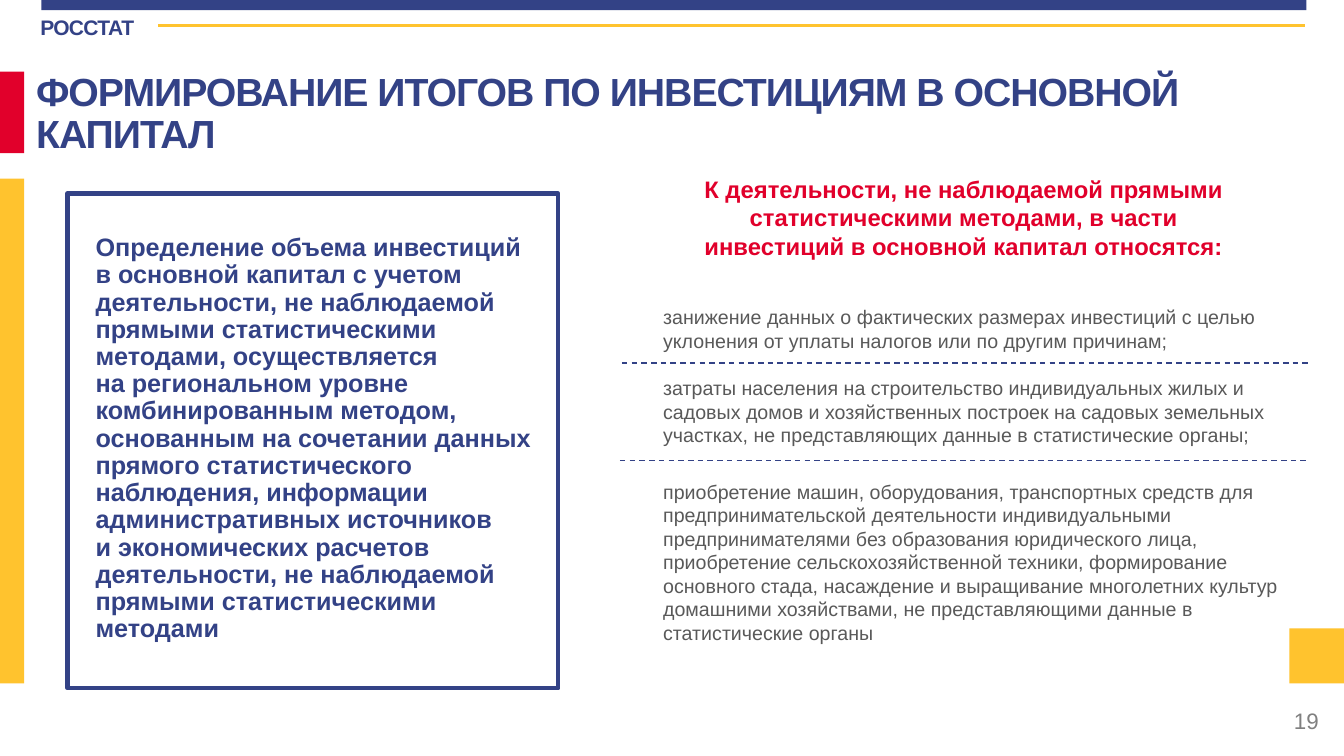
from dataclasses import dataclass

from lxml import etree
from pptx import Presentation
from pptx.dml.color import RGBColor
from pptx.enum.dml import MSO_LINE
from pptx.enum.shapes import MSO_CONNECTOR, MSO_SHAPE
from pptx.enum.text import MSO_ANCHOR, PP_ALIGN
from pptx.oxml.ns import qn
from pptx.util import Pt

RECTANGLE = MSO_SHAPE.RECTANGLE
STRAIGHT = MSO_CONNECTOR.STRAIGHT
DASH = MSO_LINE.DASH
LEFT, CENTER, RIGHT = PP_ALIGN.LEFT, PP_ALIGN.CENTER, PP_ALIGN.RIGHT
TOP, MIDDLE = MSO_ANCHOR.TOP, MSO_ANCHOR.MIDDLE


@dataclass(frozen=True)
class Theme:
    font: str = "Arial"
    blue: str = "334286"
    red: str = "E1002B"
    yellow: str = "FFC32E"
    dark_gray: str = "595959"
    light_gray: str = "808080"
    title_size: int = 28
    summary_size: int = 18
    heading_size: int = 17
    number_size: int = 16
    agency_size: int = 15
    reason_size: int = 14


class SlideBuilder:
    def __init__(self, slide, theme):
        self.shapes = slide.shapes
        self.theme = theme

    def bar(self, left, top, width, height, color):
        bar = self.shapes.add_shape(RECTANGLE, Pt(left), Pt(top), Pt(width), Pt(height))
        bar.shadow.inherit = False
        bar.fill.solid()
        bar.fill.fore_color.rgb = RGBColor.from_string(color)
        bar.line.fill.background()

    def frame(self, left, top, width, height, color, weight):
        frame = self.shapes.add_shape(RECTANGLE, Pt(left), Pt(top), Pt(width), Pt(height))
        frame.shadow.inherit = False
        frame.fill.background()
        frame.line.color.rgb = RGBColor.from_string(color)
        frame.line.width = Pt(weight)

    def rule(self, left, right, y, color, weight, dash=None):
        rule = self.shapes.add_connector(STRAIGHT, Pt(left), Pt(y), Pt(right), Pt(y))
        rule.line.color.rgb = RGBColor.from_string(color)
        rule.line.width = Pt(weight)
        if dash is not None:
            rule.line.dash_style = dash
        etree.SubElement(rule.element.spPr, qn("a:effectLst"))

    def text(self, left, top, width, height, lines, size, color, bold=False,
             align=LEFT, anchor=TOP, spacing=1.0, tracking=0, inset=(7.2, 3.6)):
        box = self.shapes.add_textbox(Pt(left), Pt(top), Pt(width), Pt(height))
        frame = box.text_frame
        frame.word_wrap = True
        frame.vertical_anchor = anchor
        frame.margin_left = frame.margin_right = Pt(inset[0])
        frame.margin_top = frame.margin_bottom = Pt(inset[1])
        para = frame.paragraphs[0]
        para.alignment = align
        para.line_spacing = spacing
        for index, line in enumerate(lines):
            if index:
                para.add_line_break()
            span = para.add_run()
            span.text = line
            span.font.name = self.theme.font
            span.font.size = Pt(size)
            span.font.bold = bold
            span.font.color.rgb = RGBColor.from_string(color)
            if tracking:
                span.font._element.set("spc", str(round(tracking * 100)))


SUMMARY = [
    "Определение объема инвестиций в основной капитал с учетом деятельности, "
    "не наблюдаемой прямыми статистическими методами, осуществляется",
    "на региональном уровне комбинированным методом, основанным на сочетании данных "
    "прямого статистического наблюдения, информации административных источников",
    "и экономических расчетов деятельности, не наблюдаемой прямыми "
    "статистическими методами",
]

REASONS = [
    (214.6, 41, "занижение данных о фактических размерах инвестиций с целью уклонения "
     "от уплаты налогов или по другим причинам;"),
    (265, 58.3, "затраты населения на строительство индивидуальных жилых и садовых домов "
     "и хозяйственных построек на садовых земельных участках, не представляющих данные "
     "в статистические органы;"),
    (339.1, 126, "приобретение машин, оборудования, транспортных средств для "
     "предпринимательской деятельности индивидуальными предпринимателями без образования "
     "юридического лица, приобретение сельскохозяйственной техники, формирование основного "
     "стада, насаждение и выращивание многолетних культур домашними хозяйствами, "
     "не представляющими данные в статистические органы"),
]


def main():
    theme = Theme()
    deck = Presentation()
    deck.slide_width, deck.slide_height = Pt(960), Pt(540)
    page = SlideBuilder(deck.slides.add_slide(deck.slide_layouts[6]), theme)

    page.text(28.8, 9.4, 82.8, 23, ["РОССТАТ"], theme.agency_size, theme.blue,
              bold=True, tracking=-0.5, inset=(0, 0.7))
    page.bar(29.5, 0, 903.6, 7.2, theme.blue)
    page.bar(0, 51.1, 17.3, 58.3, theme.red)
    page.bar(0, 127.6, 17.3, 360.6, theme.yellow)
    page.text(18.7, 48.2, 946.8, 72.7,
              ["ФОРМИРОВАНИЕ ИТОГОВ ПО ИНВЕСТИЦИЯМ В ОСНОВНОЙ КАПИТАЛ"],
              theme.title_size, theme.blue, bold=True, spacing=0.9, tracking=-0.7)
    page.text(733, 500.4, 216, 28.8, ["19"], theme.number_size, theme.light_gray,
              align=RIGHT, anchor=MIDDLE)
    page.bar(921, 448.8, 39, 39.4, theme.yellow)

    page.frame(48.2, 138.2, 350.6, 353.5, theme.blue, 3)
    page.text(61.2, 164.2, 331.2, 328.3, SUMMARY, theme.summary_size, theme.blue,
              bold=True, spacing=0.9)

    page.text(477.4, 121, 421.9, 69.1,
              ["К деятельности, не наблюдаемой прямыми статистическими методами, "
               "в части инвестиций в основной капитал относятся:"],
              theme.heading_size, theme.red, bold=True, align=CENTER)
    for top, height, reason in REASONS:
        page.text(466.6, top, 482.4, height, [reason], theme.reason_size, theme.dark_gray)
    page.rule(444.2, 935.3, 259.2, theme.blue, 1, DASH)
    page.rule(442.8, 933.1, 329, theme.blue, 1, DASH)
    page.rule(113, 932.4, 18, theme.yellow, 2)

    deck.save("out.pptx")


if __name__ == "__main__":
    main()
